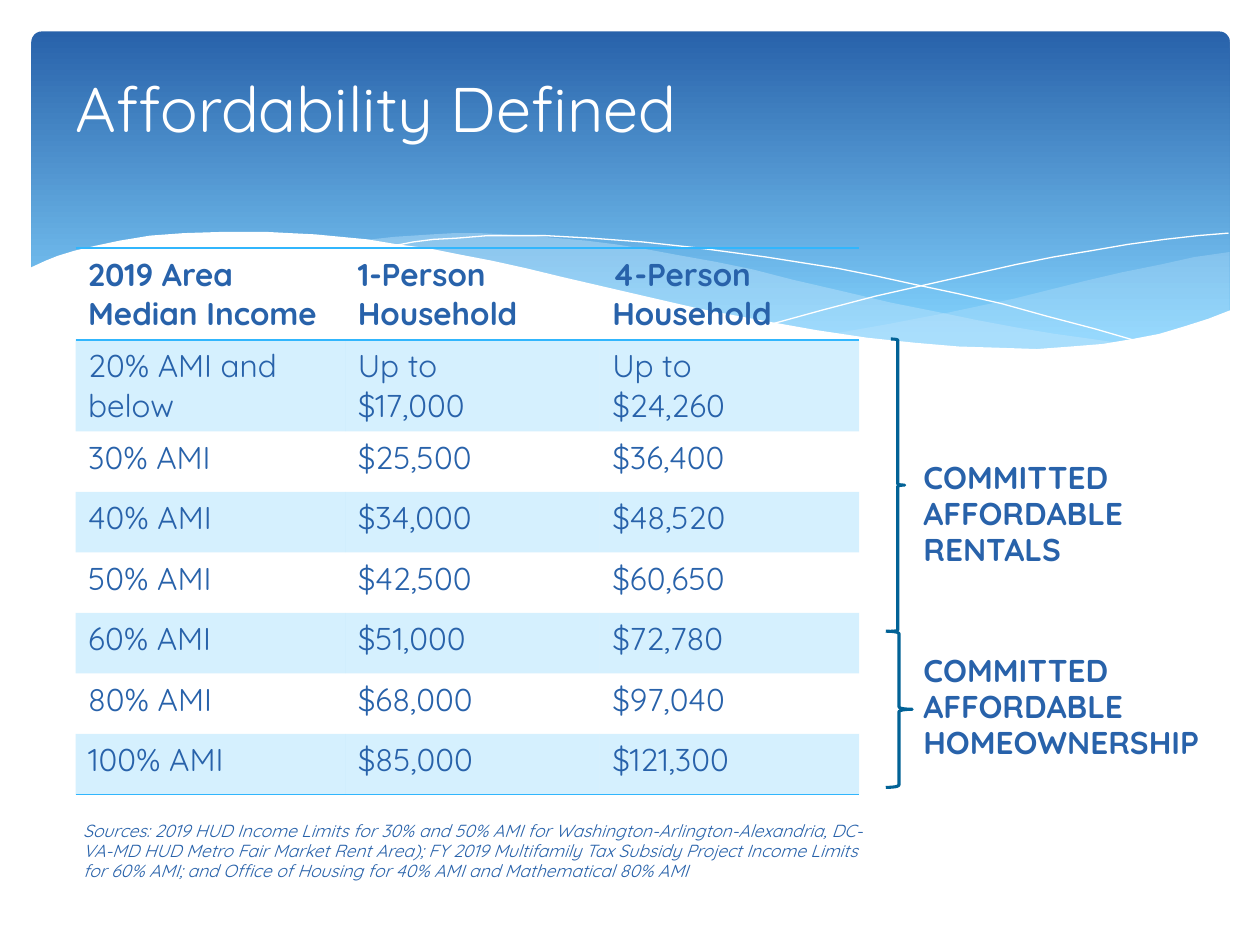
from lxml.etree import SubElement
from pptx import Presentation
from pptx.dml.color import RGBColor
from pptx.enum.shapes import MSO_SHAPE
from pptx.enum.text import MSO_ANCHOR, MSO_AUTO_SIZE, PP_ALIGN
from pptx.oxml import parse_xml
from pptx.oxml.ns import nsdecls, qn
from pptx.util import Inches, Pt

FONT = "Quicksand"
BLUE = RGBColor(0x28, 0x62, 0xAA)
SKY = RGBColor(0x83, 0xD3, 0xFE)
PALE = RGBColor(0xC6, 0xE7, 0xFC)
ACCENT = RGBColor(0x31, 0xB6, 0xFD)
BRACE = RGBColor(0x01, 0x62, 0x96)
WHITE = RGBColor(0xFF, 0xFF, 0xFF)
NO_GRID_STYLE = "{2D5ABB26-0587-4C30-8999-92F81FD0307C}"

RIGHT_WAVE = [
    (9.76, 2), (9.48, 2.04), (9.21, 2.1), (8.91, 2.16), (8.61, 2.23), (8.05, 2.37),
    (7.53, 2.48), (7.06, 2.57), (6.61, 2.65), (6.91, 2.69), (7.19, 2.72), (7.45, 2.75),
    (7.69, 2.77), (8.03, 2.78), (8.35, 2.77), (8.63, 2.75), (8.89, 2.72), (9.13, 2.67),
    (9.35, 2.62), (9.49, 2.57), (9.63, 2.52), (9.76, 2.47),
]
MIDDLE_WAVE = [
    (8.93, 2.73), (8.66, 2.69), (8.37, 2.65), (8.07, 2.6), (7.75, 2.54), (7.41, 2.47),
    (7.06, 2.4), (6.68, 2.31), (6.29, 2.22), (5.98, 2.14), (5.69, 2.08), (5.41, 2.03),
    (5.14, 1.98), (4.89, 1.94), (4.65, 1.91), (4.42, 1.89), (4.2, 1.87), (3.99, 1.86),
    (3.8, 1.85), (3.61, 1.85), (3.44, 1.86), (3.13, 1.88), (2.86, 1.91), (3.23, 1.96),
    (3.62, 2.03), (4.04, 2.11), (4.49, 2.22), (4.91, 2.32), (5.3, 2.4), (5.66, 2.48),
    (6.01, 2.55), (6.34, 2.61), (6.65, 2.66), (6.95, 2.7), (7.22, 2.74), (7.48, 2.76),
    (7.73, 2.77), (7.96, 2.78), (8.38, 2.78), (8.67, 2.76),
]
FALLING_LINE = [
    (3.09, 1.95), (3.18, 1.94), (3.28, 1.92), (3.44, 1.9), (3.63, 1.89), (3.87, 1.87),
    (4.33, 1.87), (4.69, 1.89), (5.1, 1.92), (5.56, 1.97), (6.08, 2.04), (6.65, 2.13),
    (6.95, 2.19), (7.27, 2.26), (7.6, 2.33), (7.95, 2.41), (8.31, 2.51), (8.69, 2.61),
    (9.07, 2.72),
]
RISING_LINE = [
    (6.13, 2.57), (6.53, 2.46), (6.95, 2.35), (7.48, 2.23), (8.06, 2.1), (8.36, 2.04),
    (8.66, 1.99), (8.95, 1.94), (9.24, 1.9), (9.51, 1.87), (9.75, 1.85),
]
WHITE_WAVE = [
    (9.77, 2.46), (9.59, 2.53), (9.4, 2.59), (9.2, 2.65), (8.99, 2.69), (8.75, 2.73),
    (8.5, 2.75), (8.23, 2.77), (7.93, 2.76), (7.61, 2.75), (7.26, 2.72), (6.88, 2.68),
    (6.48, 2.62), (6.03, 2.54), (5.55, 2.45), (5.03, 2.33), (4.47, 2.2), (4.18, 2.13),
    (3.91, 2.07), (3.65, 2.02), (3.4, 1.97), (3.16, 1.94), (2.92, 1.9), (2.71, 1.88),
    (2.5, 1.86), (2.3, 1.85), (2.11, 1.84), (1.77, 1.84), (1.46, 1.85), (1.19, 1.87),
    (0.95, 1.91), (0.76, 1.95), (0.59, 1.99), (0.46, 2.03), (0.36, 2.07), (0.23, 2.13),
    (0.23, 3.29), (9.77, 3.29),
]

INCOME_ROWS = [
    ("2019 Area Median Income", "1-Person Household", "4-Person Household"),
    ("20% AMI and below", "Up to\n$17,000", "Up to\n$24,260"),
    ("30% AMI", "$25,500", "$36,400"),
    ("40% AMI", "$34,000", "$48,520"),
    ("50% AMI", "$42,500", "$60,650"),
    ("60% AMI", "$51,000", "$72,780"),
    ("80% AMI", "$68,000", "$97,040"),
    ("100% AMI", "$85,000", "$121,300"),
]
COLUMN_WIDTHS = (2.14, 2.02, 2.06)
ROW_HEIGHTS = [0.69, 0.65] + [0.48] * 6
SOURCES = (
    "Sources: 2019 HUD Income Limits for 30% and 50% AMI for Washington-Arlington-Alexandria, "
    "DC-VA-MD HUD Metro Fair Market Rent Area); FY 2019 Multifamily Tax Subsidy Project Income "
    "Limits for 60% AMI; and Office of Housing for 40% AMI and Mathematical 80% AMI"
)


def add_span(para, text, size, color=BLUE, bold=False, italic=False):
    """Add one formatted run to a paragraph."""
    span = para.add_run()
    span.text = text
    font = span.font
    font.name, font.size, font.bold, font.italic = FONT, Pt(size), bold, italic
    font.color.rgb = color


def set_alpha(properties, percent):
    """Make the solid fill of a properties element partly transparent."""
    color = properties.find(qn("a:solidFill")).find(qn("a:srgbClr"))
    SubElement(color, qn("a:alpha")).set("val", str(percent * 1000))


def add_banner(page):
    """Add the rounded gradient panel behind the title."""
    panel = page.shapes.add_shape(
        MSO_SHAPE.ROUNDED_RECTANGLE, Inches(0.25), Inches(0.25), Inches(9.51), Inches(2.7))
    panel.adjustments[0] = 0.03
    panel.shadow.inherit = False
    panel.line.fill.background()
    panel.fill.gradient()
    panel.fill.gradient_angle = 270
    for stop, position, color in zip(panel.fill.gradient_stops, (0, 0.9), (BLUE, SKY)):
        stop.position = position
        stop.color.rgb = color


def add_curve(page, points, fill=None, alpha=100):
    """Add a filled wave, or a thin white line when no fill is given."""
    start, *others = [(Inches(x), Inches(y)) for x, y in points]
    builder = page.shapes.build_freeform(*start)
    builder.add_line_segments(others, close=fill is not None)
    curve = builder.convert_to_shape()
    curve.shadow.inherit = False
    if fill is None:
        curve.fill.background()
        curve.line.color.rgb = WHITE
        curve.line.width = Pt(0)
        return
    curve.line.fill.background()
    curve.fill.solid()
    curve.fill.fore_color.rgb = fill
    if alpha < 100:
        set_alpha(curve.element.spPr, alpha)


def add_border(properties, edge):
    """Put a one-point accent border on one edge of a cell."""
    properties.insert(0, parse_xml(
        f'<a:{edge} {nsdecls("a")} w="12700"><a:solidFill>'
        f'<a:srgbClr val="{ACCENT}"/></a:solidFill></a:{edge}>'))


def fill_cell(cell, text, row):
    """Write and format one cell of the income table."""
    for index, line in enumerate(text.split("\n")):
        frame = cell.text_frame
        para = frame.add_paragraph() if index else frame.paragraphs[0]
        add_span(para, line, 18, bold=row == 0)
    properties = cell._tc.get_or_add_tcPr()
    if row % 2:
        cell.fill.solid()
        cell.fill.fore_color.rgb = ACCENT
        set_alpha(properties, 20)
    else:
        cell.fill.background()
    if row in (0, len(INCOME_ROWS) - 1):
        add_border(properties, "lnB")
    if row == 0:
        add_border(properties, "lnT")


def add_income_table(page):
    """Add the table of income limits."""
    frame = page.shapes.add_table(
        len(INCOME_ROWS), len(COLUMN_WIDTHS), Inches(0.6), Inches(1.97),
        Inches(sum(COLUMN_WIDTHS)), Inches(sum(ROW_HEIGHTS)))
    frame.element.find(".//" + qn("a:tableStyleId")).text = NO_GRID_STYLE
    table = frame.table
    table.first_row = table.horz_banding = False
    for column, width in zip(table.columns, COLUMN_WIDTHS):
        column.width = Inches(width)
    for row, (height, texts) in enumerate(zip(ROW_HEIGHTS, INCOME_ROWS)):
        table.rows[row].height = Inches(height)
        for column, text in enumerate(texts):
            fill_cell(table.cell(row, column), text, row)


def add_text(page, text, left, top, width, height, size, inset=0.1, **style):
    """Add a wrapped text box with one paragraph."""
    box = page.shapes.add_textbox(Inches(left), Inches(top), Inches(width), Inches(height))
    box.text_frame.word_wrap = True
    box.text_frame.margin_left = Inches(inset)
    para = box.text_frame.paragraphs[0]
    para.line_spacing = 0.95
    add_span(para, text, size, **style)


def add_brace(page, left, top, width, height):
    """Add a right brace that groups table rows."""
    brace = page.shapes.add_shape(
        MSO_SHAPE.RIGHT_BRACE, Inches(left), Inches(top), Inches(width), Inches(height))
    brace.shadow.inherit = False
    brace.fill.background()
    brace.line.color.rgb = BRACE
    brace.line.width = Pt(1.75)


def set_title(page, text):
    """Place the title in front of the banner."""
    title = page.shapes.title
    title.left, title.top = Inches(0.5), Inches(0.37)
    title.width, title.height = Inches(7.92), Inches(0.96)
    frame = title.text_frame
    frame.auto_size = MSO_AUTO_SIZE.NONE
    frame.vertical_anchor = MSO_ANCHOR.MIDDLE
    para = frame.paragraphs[0]
    para.alignment = PP_ALIGN.LEFT
    add_span(para, text, 36, WHITE)
    page.shapes.element.append(title.element)


def main():
    """Build and save the slide."""
    deck = Presentation()
    deck.slide_width, deck.slide_height = Inches(10), Inches(7.5)
    page = deck.slides.add_slide(deck.slide_layouts[5])
    add_banner(page)
    add_curve(page, RIGHT_WAVE, PALE, 29)
    add_curve(page, MIDDLE_WAVE, PALE, 40)
    add_curve(page, FALLING_LINE)
    add_curve(page, RISING_LINE)
    add_curve(page, WHITE_WAVE, WHITE)
    add_income_table(page)
    add_text(page, SOURCES, 0.5, 6.47, 6.53, 0.81, 10, inset=0.16, italic=True)
    add_brace(page, 7.07, 2.69, 0.11, 2.32)
    add_text(page, "COMMITTED AFFORDABLE RENTALS", 7.23, 3.61, 1.89, 1.01, 18, bold=True)
    add_text(page, "COMMITTED AFFORDABLE HOMEOWNERSHIP", 7.23, 5.14, 2.61, 1.01, 18, bold=True)
    add_brace(page, 7.03, 5.01, 0.21, 1.24)
    set_title(page, "Affordability Defined")
    deck.save("out.pptx")


if __name__ == "__main__":
    main()
